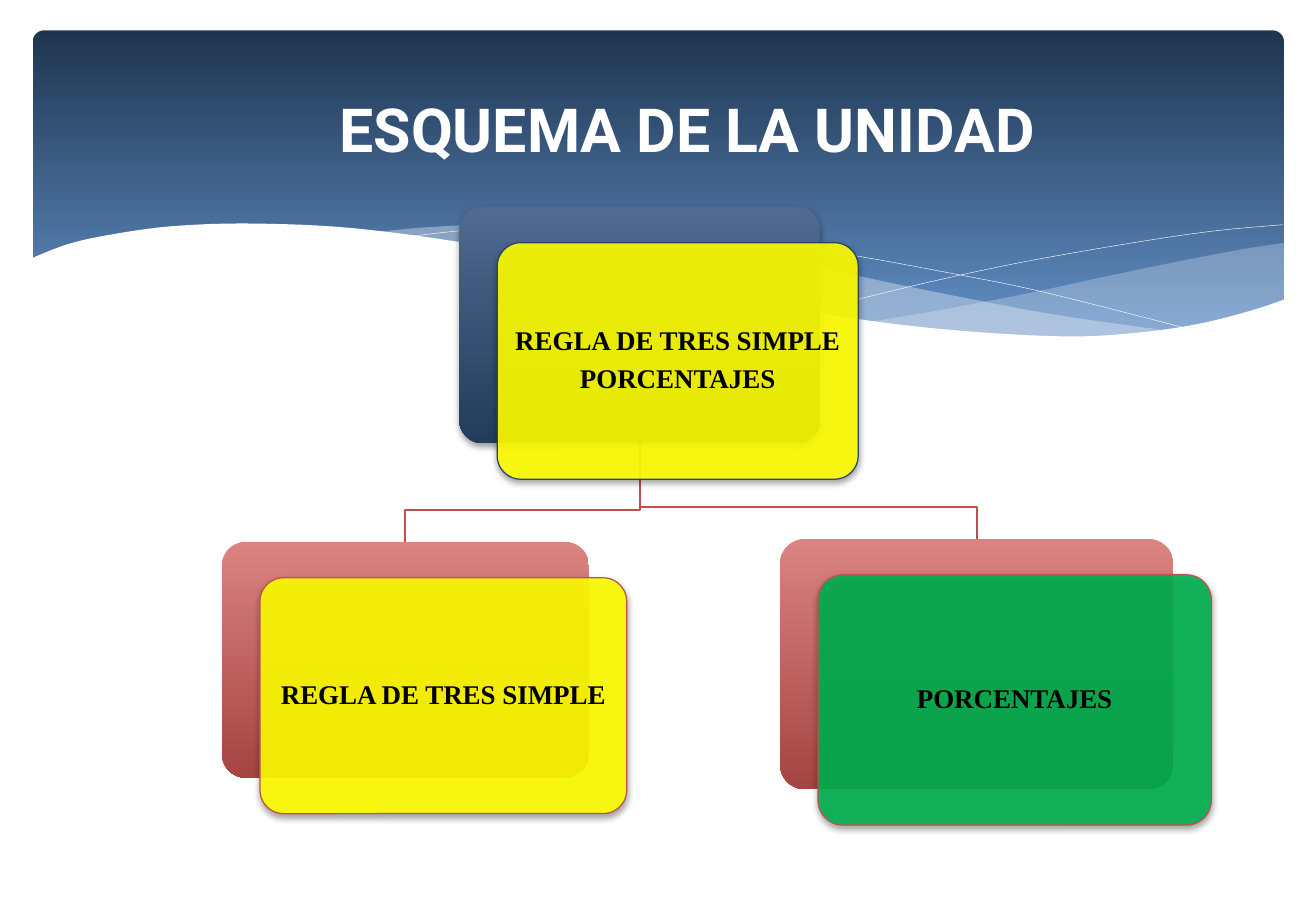
from lxml import etree
from pptx import Presentation
from pptx.dml.color import RGBColor
from pptx.enum.shapes import MSO_SHAPE
from pptx.enum.text import MSO_ANCHOR, PP_ALIGN
from pptx.oxml.ns import qn
from pptx.util import Pt

ROUNDED = MSO_SHAPE.ROUNDED_RECTANGLE
MIDDLE = MSO_ANCHOR.MIDDLE
CENTER = PP_ALIGN.CENTER
WHITE = RGBColor(0xFF, 0xFF, 0xFF)
BLACK = RGBColor(0x00, 0x00, 0x00)
PALE_BLUE = RGBColor(0xE7, 0xED, 0xF5)
NAVY = RGBColor(0x1E, 0x35, 0x50)
SKY = RGBColor(0x60, 0x8D, 0xC3)
SLATE = RGBColor(0x50, 0x6A, 0x92)
DEEP_BLUE = RGBColor(0x22, 0x3C, 0x5B)
EDGE_BLUE = RGBColor(0x28, 0x46, 0x6A)
ROSE = RGBColor(0xDA, 0x83, 0x81)
BRICK = RGBColor(0xA5, 0x44, 0x42)
RED = RGBColor(0xC0, 0x50, 0x4D)
YELLOW = RGBColor(0xFF, 0xFF, 0x00)
GREEN = RGBColor(0x00, 0xB0, 0x50)

deck = Presentation()
deck.slide_width, deck.slide_height = Pt(780), Pt(540)
page = deck.slides.add_slide(deck.slide_layouts[5])


def rounded_box(left, top, width, height, radius, colors, opacity=100, shadow=False):
    box = page.shapes.add_shape(ROUNDED, Pt(left), Pt(top), Pt(width), Pt(height))
    box.adjustments[0] = radius
    box.shadow.inherit = False
    box.line.fill.background()
    properties = box.element.spPr
    if len(colors) == 2:
        box.fill.gradient()
        box.fill.gradient_angle = 270
        for stop, color in zip(box.fill.gradient_stops, colors):
            stop.color.rgb = color
    else:
        box.fill.solid()
        box.fill.fore_color.rgb = colors[0]
        tint = properties.find(qn("a:solidFill"))[0]
        etree.SubElement(tint, qn("a:alpha"), val=str(opacity * 1000))
    if shadow:
        effects = properties.find(qn("a:effectLst"))
        outer = etree.SubElement(effects, qn("a:outerShdw"), blurRad=str(Pt(4)),
                                 dist=str(Pt(2)), dir="5400000", rotWithShape="0")
        tint = etree.SubElement(outer, qn("a:srgbClr"), val="000000")
        etree.SubElement(tint, qn("a:alpha"), val="38000")
    return box


def outline(curves, fill=None, opacity=100, line=None, width=0.25, steps=6):
    points = []
    for curve in curves:
        padded = [curve[0], *curve, curve[-1]]
        for a, b, c, d in zip(padded, padded[1:], padded[2:], padded[3:]):
            for step in range(steps):
                t = step / steps
                points.append([
                    50 * (2 * q + (r - p) * t + (2 * p - 5 * q + 4 * r - s) * t**2
                          + (3 * q - p - 3 * r + s) * t**3)
                    for p, q, r, s in zip(a, b, c, d)])
        points.append([100 * value for value in curve[-1]])
    builder = page.shapes.build_freeform(*points[0], scale=Pt(1) / 100)
    builder.add_line_segments(points[1:], close=fill is not None)
    shape = builder.convert_to_shape()
    shape.shadow.inherit = False
    if fill is None:
        shape.fill.background()
        shape.line.color.rgb = line
        shape.line.width = Pt(width)
    else:
        shape.fill.solid()
        shape.fill.fore_color.rgb = fill
        shape.line.fill.background()
        tint = shape.element.spPr.find(qn("a:solidFill"))[0]
        etree.SubElement(tint, qn("a:alpha"), val=str(opacity * 1000))


panel = rounded_box(19.5, 18, 741.5, 194.4, 0.034, [NAVY, SKY])
panel.fill.gradient_stops[1].position = 0.9

wedge_top = [(761, 144), (729.4, 149), (671, 160.6), (607.7, 174.2), (550.8, 185),
             (515.5, 190.8)]
wedge_bottom = [(515.5, 190.8), (560, 195.8), (609, 199.4), (651, 199.4),
                (693.4, 195.8), (729.4, 188.6), (761, 177.8)]
band_top = [(223.2, 137.5), (255.6, 134.6), (296, 133.2), (344, 136), (401, 142.6),
            (455, 152), (521.3, 166.3), (578.2, 177.8), (629.3, 187.2), (696.2, 196.6)]
band_bottom = [(696.2, 196.6), (661.7, 199.4), (620.6, 200.2), (563.8, 197.3),
               (494.6, 187.9), (413.3, 172.8), (350.6, 159.8), (282.2, 146.2),
               (223.2, 137.5)]
falling_line = [(241, 140.4), (283, 136), (337.7, 134.6), (381.6, 136.8), (434, 141.8),
                (496, 149.8), (567.4, 162.7), (620, 173.5), (707.8, 195.8)]
rising_line = [(478.8, 185), (542.2, 169.2), (605.5, 155.5), (675.4, 143.3),
               (720.7, 136.8), (760.3, 133.2)]
wave = [(18, 153.4), (40.3, 144.7), (66, 139), (103, 134), (150.5, 132.5),
        (211, 135.4), (284.4, 145.4), (348.5, 158.4), (432.7, 176.4), (504.7, 188.6),
        (566.6, 195.8), (630.7, 199.4), (673.2, 197.3), (709.2, 192.2), (740.9, 184.3),
        (762.5, 177.1)]
outline([wedge_top, wedge_bottom], PALE_BLUE, 29)
outline([band_top, band_bottom], PALE_BLUE, 40)
outline([falling_line], line=WHITE)
outline([rising_line], line=WHITE)
outline([wave, [(762.5, 236.9), (18, 236.9)]], WHITE)

title = page.shapes.title
page.shapes.element.append(title.element)
title.left, title.top, title.width, title.height = Pt(39), Pt(26.6), Pt(702), Pt(98.6)
title.text_frame.margin_left = Pt(42)
title.text_frame.vertical_anchor = MIDDLE
para = title.text_frame.paragraphs[0]
para.text = "ESQUEMA DE LA UNIDAD"
para.alignment = CENTER
para.font.name = "Roboto"
para.font.size = Pt(36)
para.font.bold = True
para.font.color.rgb = WHITE

for child_x, child_top in [(578.9, 319.4), (240.2, 321.2)]:
    elbow_y = child_top - 18.7
    outline([[(379.3, 262.8), (379.3, elbow_y), (child_x, elbow_y), (child_x, child_top)]],
            line=RED, width=1.25, steps=1)

cards = [
    (272.2, 122.6, 214, 140.2, [SLATE, DEEP_BLUE], YELLOW, EDGE_BLUE, True,
     ["REGLA DE TRES SIMPLE", "PORCENTAJES"]),
    (131.6, 321.2, 217.4, 139.8, [ROSE, BRICK], YELLOW, RED, False,
     ["REGLA DE TRES SIMPLE"]),
    (462.3, 319.4, 233.2, 148.4, [ROSE, BRICK], GREEN, RED, False,
     ["PORCENTAJES"]),
]
for left, top, width, height, back_colors, color, edge, back_shadow, lines in cards:
    rounded_box(left, top, width, height, 0.1, back_colors, shadow=back_shadow)
    card = rounded_box(left + 22.5, top + 21.3, width, height, 0.1, [color], 90, True)
    card.line.color.rgb = edge
    card.line.width = Pt(0.75)
    frame = card.text_frame
    frame.word_wrap = True
    frame.vertical_anchor = MIDDLE
    frame.margin_left = frame.margin_right = Pt(5)
    frame.margin_top = frame.margin_bottom = Pt(5)
    frame.text = "\n".join(lines)
    for para in frame.paragraphs:
        para.alignment = CENTER
        para.line_spacing = 0.9
        para.space_after = Pt(5.6)
        para.font.name = "Times New Roman"
        para.font.size = Pt(16)
        para.font.bold = True
        para.font.color.rgb = BLACK

deck.save("out.pptx")
